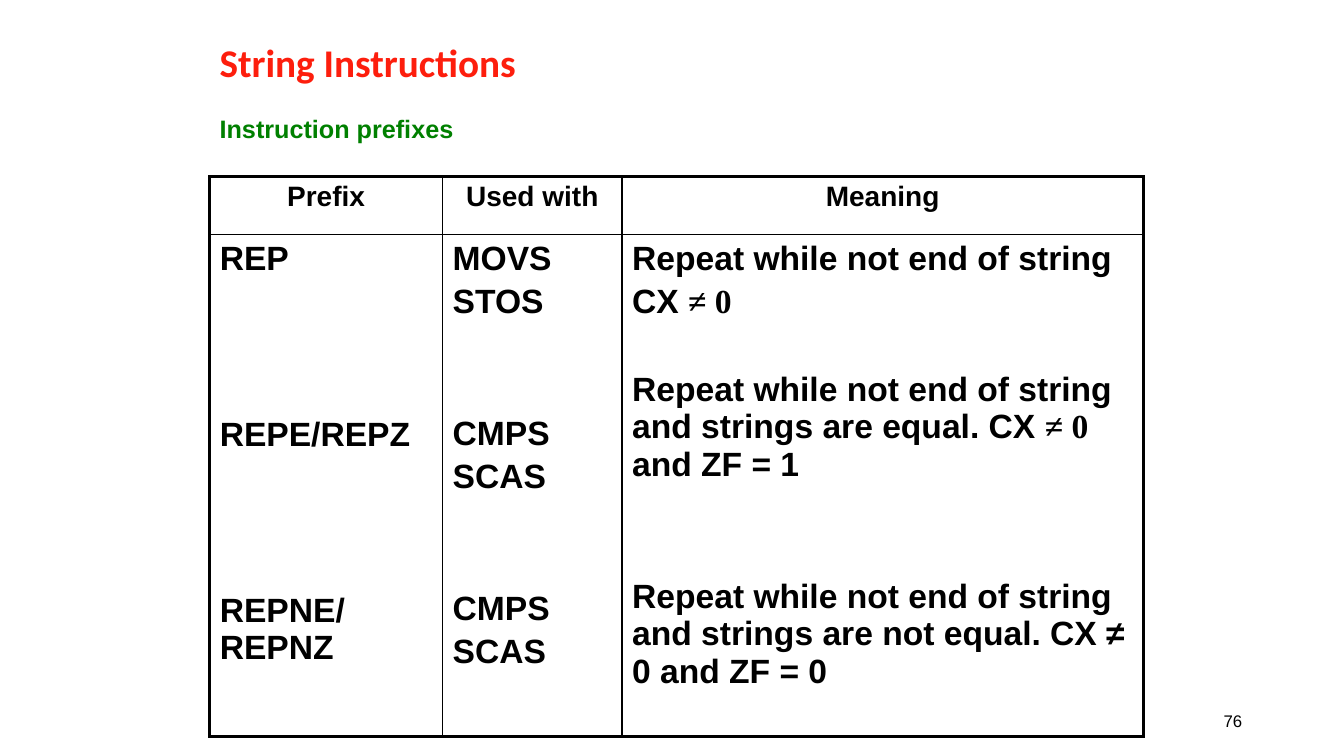
import pptx
import pptx.dml.color
import pptx.enum.text
import pptx.oxml
import pptx.oxml.ns
import pptx.util
from pptx.util import Inches

COLOURS = {"title": "FD1E0D", "subtitle": "008000", "ink": "000000"}
ALIGN = pptx.enum.text.PP_ALIGN
ANCHOR = pptx.enum.text.MSO_ANCHOR

THIN, THICK = 1, 2.25
PARAGRAPH_GAP = 4.2
LINE_PITCH = 31.6

COLUMN_WIDTHS = [2.31, 1.78, 5.17]
ROW_HEIGHTS = [0.58, 4.98]
HEADINGS = ["Prefix", "Used with", "Meaning"]
NOT_ZERO = ("≠ 0", "Times New Roman")
# Each paragraph: lines of space above it, then its spans of text and font.
BODY = [
    [
        (0, [("REP", "Arial")]),
        (3, [("REPE/REPZ", "Arial")]),
        (3, [("REPNE/REPNZ", "Arial")]),
    ],
    [
        (0, [("MOVS", "Arial")]),
        (0, [("STOS", "Arial")]),
        (2, [("CMPS", "Arial")]),
        (0, [("SCAS", "Arial")]),
        (2, [("CMPS", "Arial")]),
        (0, [("SCAS", "Arial")]),
    ],
    [
        (0, [("Repeat while not end of string", "Arial")]),
        (0, [("CX ", "Arial"), NOT_ZERO]),
        (1, [("Repeat while not end of string and strings are equal. CX ", "Arial"),
             NOT_ZERO, (" and ZF = 1", "Arial")]),
        (2, [("Repeat while not end of string and strings are not equal. "
              "CX ≠ 0 and ZF = 0", "Arial")]),
    ],
]


def set_font(font, size, colour, bold=True, name="Arial"):
    font.size = pptx.util.Pt(size)
    font.bold = bold
    font.name = name
    font.color.rgb = pptx.dml.color.RGBColor.from_string(COLOURS[colour])


def add_text(page, text, place, size, colour, name="Arial", bold=True,
             align=ALIGN.LEFT, anchor=ANCHOR.TOP, line_spacing=1.0):
    box = page.shapes.add_textbox(*map(Inches, place))
    frame = box.text_frame
    frame.word_wrap = True
    frame.vertical_anchor = anchor
    para = frame.paragraphs[0]
    para.text = text
    para.alignment = align
    para.line_spacing = line_spacing
    set_font(para.font, size, colour, bold, name)


def set_borders(cell, widths):
    """Draw the left, right, top and bottom borders, with widths in points."""
    properties = cell._tc.get_or_add_tcPr()
    for index, (side, width) in enumerate(zip("LRTB", widths)):
        line = pptx.oxml.parse_xml(
            f'<a:ln{side} {pptx.oxml.ns.nsdecls("a")} w="{pptx.util.Pt(width)}">'
            f'<a:solidFill><a:srgbClr val="{COLOURS["ink"]}"/></a:solidFill>'
            f'</a:ln{side}>')
        properties.insert(index, line)


def fill_heading(cell, text):
    para = cell.text_frame.paragraphs[0]
    para.text = text
    para.alignment = ALIGN.CENTER
    set_font(para.font, 20, "ink")


def fill_body(cell, paragraphs):
    frame = cell.text_frame
    for index, (skipped_lines, spans) in enumerate(paragraphs):
        para = frame.add_paragraph() if index else frame.paragraphs[0]
        if index:
            para.space_before = pptx.util.Pt(PARAGRAPH_GAP + skipped_lines * LINE_PITCH)
        set_font(para.font, 24, "ink")
        for text, name in spans:
            span = para.add_run()
            span.text = text
            span.font.name = name


def add_prefix_table(page):
    rows, columns = len(ROW_HEIGHTS), len(COLUMN_WIDTHS)
    table = page.shapes.add_table(
        rows, columns, Inches(2.08), Inches(1.75),
        Inches(sum(COLUMN_WIDTHS)), Inches(sum(ROW_HEIGHTS))).table
    table.first_row = table.horz_banding = False
    for column, width in zip(table.columns, COLUMN_WIDTHS):
        column.width = Inches(width)
    for row, height in zip(table.rows, ROW_HEIGHTS):
        row.height = Inches(height)

    for r in range(rows):
        for c in range(columns):
            cell = table.cell(r, c)
            cell.fill.background()
            on_edge = [c == 0, c == columns - 1, r == 0, r == rows - 1]
            set_borders(cell, [THICK if edge else THIN for edge in on_edge])
    for c in range(columns):
        fill_heading(table.cell(0, c), HEADINGS[c])
        fill_body(table.cell(1, c), BODY[c])


def main():
    deck = pptx.Presentation()
    deck.slide_width, deck.slide_height = Inches(13.33), Inches(7.5)
    page = deck.slides.add_slide(deck.slide_layouts[6])
    add_text(page, "76", (9.42, 6.95, 3, 0.4), 12, "ink", bold=False,
             align=ALIGN.RIGHT, anchor=ANCHOR.MIDDLE)
    add_text(page, "String Instructions", (2.08, 0.33, 6.91, 0.62), 28, "title",
             name="Calibri", anchor=ANCHOR.MIDDLE, line_spacing=0.9)
    add_text(page, "Instruction prefixes", (2.08, 1.08, 4.92, 0.4), 18, "subtitle")
    add_prefix_table(page)
    deck.save("out.pptx")


if __name__ == "__main__":
    main()
